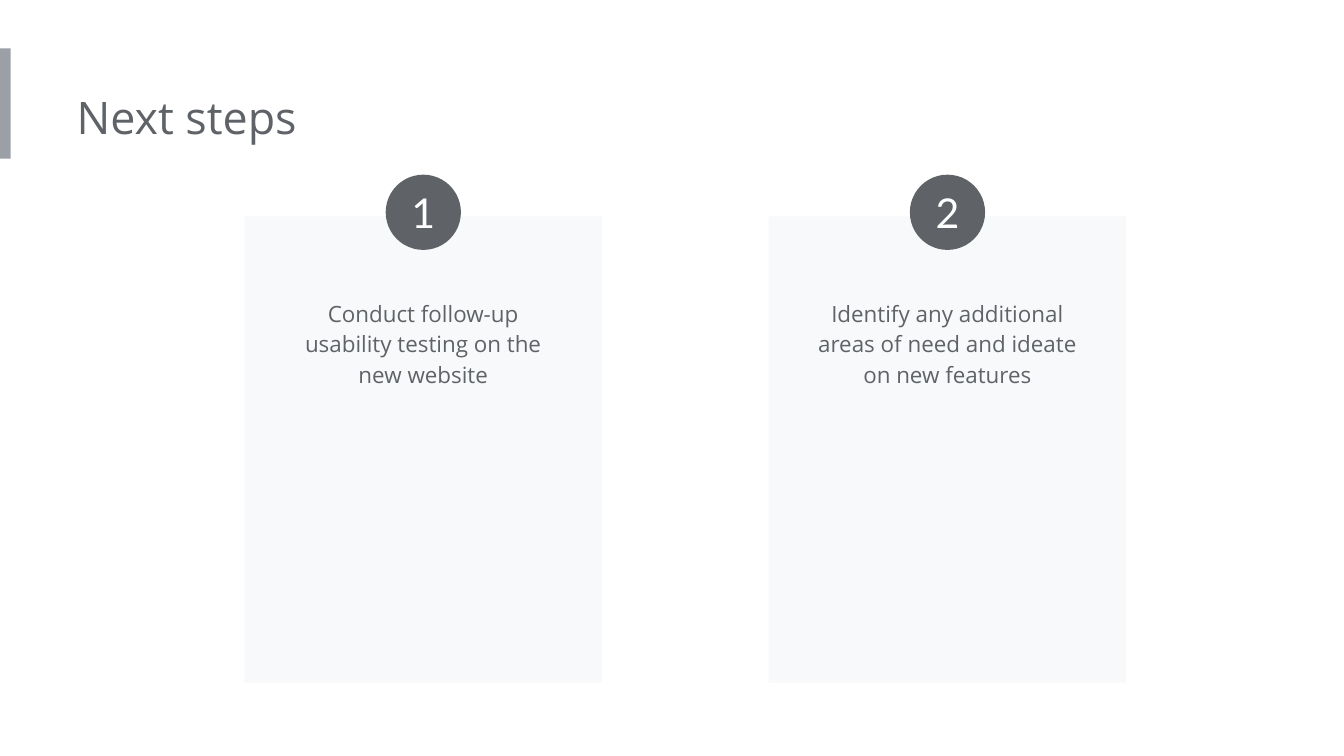
from pptx import Presentation
from pptx.dml.color import RGBColor
from pptx.enum.shapes import MSO_SHAPE as Shape
from pptx.enum.text import MSO_ANCHOR as Anchor, PP_ALIGN as Align
from pptx.util import Inches, Pt

ACCENT_GRAY = RGBColor(0x9A, 0xA0, 0xA6)
DARK_GRAY = RGBColor(0x5F, 0x63, 0x68)
CARD_GRAY = RGBColor(0xF8, 0xF9, 0xFA)
WHITE = RGBColor(0xFF, 0xFF, 0xFF)

STEPS = [
    "Conduct follow-up usability testing on the new website",
    "Identify any additional areas of need and ideate on new features",
]
SLIDE_WIDTH = 10
CARD_LEFT, CARD_TOP = 1.82, 1.61
CARD_WIDTH, CARD_HEIGHT = 2.66, 3.47
CARD_PITCH = 3.9
TEXT_WIDTH = 2.24
BADGE_SIZE = 0.56


def add_filled_shape(slide, kind, left, top, width, height, color):
    shape = slide.shapes.add_shape(
        kind, Inches(left), Inches(top), Inches(width), Inches(height))
    shape.shadow.inherit = False
    shape.fill.solid()
    shape.fill.fore_color.rgb = color
    shape.line.fill.background()
    return shape


def write_text(shape, text, *, size, font="Open Sans", color=DARK_GRAY,
               align=Align.LEFT, anchor=Anchor.TOP, spacing=None,
               insets=(0.1, 0.1, 0.1, 0.1)):
    """Fill a shape with one paragraph; insets are left, top, right, bottom."""
    frame = shape.text_frame
    frame.word_wrap = True
    frame.vertical_anchor = anchor
    (frame.margin_left, frame.margin_top,
     frame.margin_right, frame.margin_bottom) = map(Inches, insets)
    paragraph = frame.paragraphs[0]
    paragraph.alignment = align
    paragraph.line_spacing = spacing
    run = paragraph.add_run()
    run.text = text
    run.font.name = font
    run.font.size = Pt(size)
    run.font.color.rgb = color


def add_text_box(slide, left, top, width, height, text, **text_format):
    box = slide.shapes.add_textbox(
        Inches(left), Inches(top), Inches(width), Inches(height))
    write_text(box, text, **text_format)


def add_title(slide, text):
    add_filled_shape(slide, Shape.RECTANGLE, 0, 0.36, 0.08, 0.82, ACCENT_GRAY)
    add_text_box(slide, 0.57, 0.57, 5.39, 0.61, text, size=24,
                 insets=(0, 0.1, 0.1, 0.1))


def add_step_card(slide, number, text):
    left = CARD_LEFT + (number - 1) * CARD_PITCH
    center = left + CARD_WIDTH / 2
    add_filled_shape(slide, Shape.RECTANGLE, left, CARD_TOP,
                     CARD_WIDTH, CARD_HEIGHT, CARD_GRAY)
    add_text_box(slide, center - TEXT_WIDTH / 2, 2.1, TEXT_WIDTH, 0.87, text,
                 size=12, align=Align.CENTER, spacing=1.15)
    badge = add_filled_shape(slide, Shape.OVAL, center - BADGE_SIZE / 2, 1.3,
                             BADGE_SIZE, BADGE_SIZE, DARK_GRAY)
    write_text(badge, str(number), size=22, font="Lato", color=WHITE,
               align=Align.CENTER, anchor=Anchor.MIDDLE, insets=(0, 0, 0, 0))


def main():
    presentation = Presentation()
    presentation.slide_width = Inches(SLIDE_WIDTH)
    presentation.slide_height = Inches(SLIDE_WIDTH * 9 / 16)
    slide = presentation.slides.add_slide(presentation.slide_layouts[6])
    add_title(slide, "Next steps")
    for number, text in enumerate(STEPS, start=1):
        add_step_card(slide, number, text)
    presentation.save("out.pptx")


if __name__ == "__main__":
    main()
